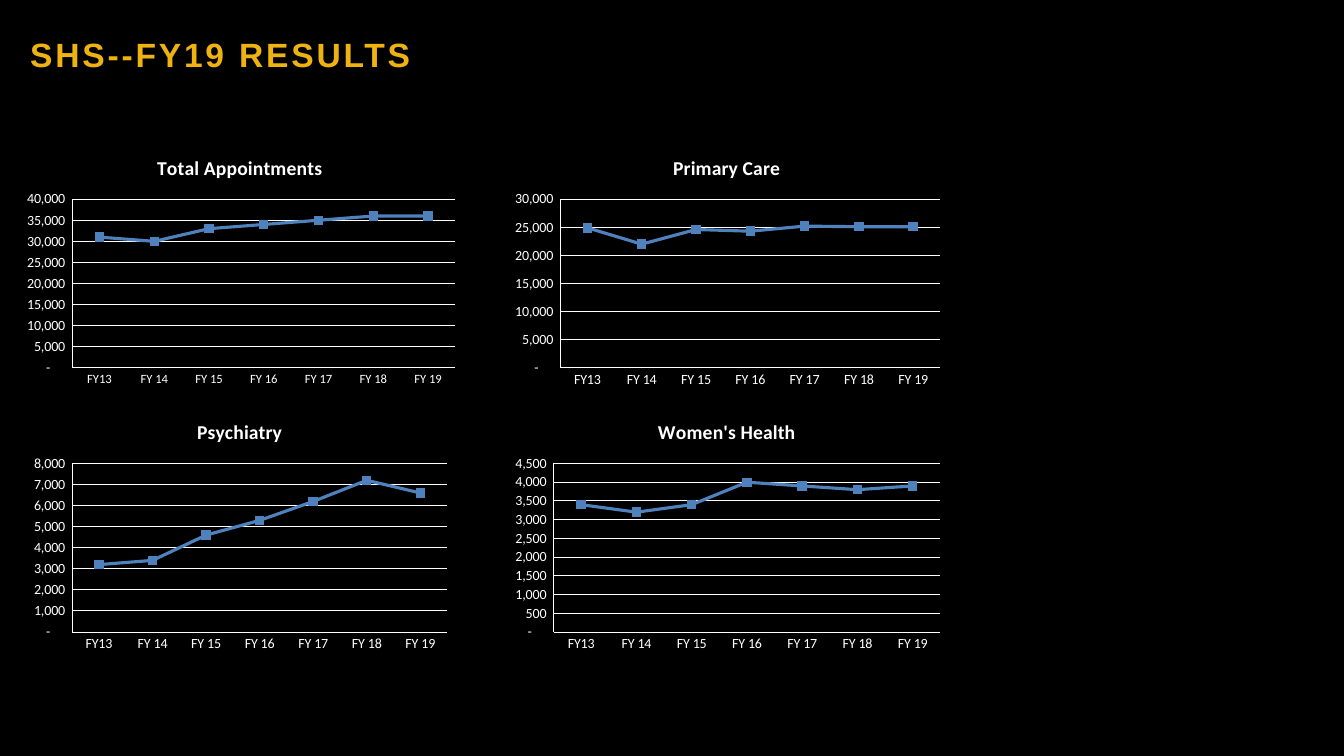
from lxml.etree import SubElement
from pptx import Presentation
from pptx.chart.data import CategoryChartData
from pptx.dml.color import RGBColor
from pptx.enum.chart import XL_CHART_TYPE, XL_MARKER_STYLE, XL_TICK_MARK
from pptx.enum.shapes import MSO_SHAPE
from pptx.enum.text import MSO_ANCHOR, PP_ALIGN
from pptx.oxml.ns import qn
from pptx.util import Cm, Pt

BLACK, WHITE, GOLD, BLUE = "000000", "FFFFFF", "EEB211", "4F81BD"
COUNT_FORMAT = '_(* #,##0_);_(* \\(#,##0\\);_(* "-"??_);_('
YEARS = ["FY13"] + [f"FY {year}" for year in range(14, 20)]

TOP_ROW, BOTTOM_ROW = 3.53, 10.19
CHART_HEIGHT = 6.35
PLOT_TOP, PLOT_HEIGHT = 1.49, 4.25
PLOT_RIGHT_MARGIN = 0.23

# title, left, top, width, plot left, axis maximum, axis step, year size, visits
TRENDS = [
    ("Psychiatry", 0.58, BOTTOM_ROW, 10.92, 1.82, 8000, 1000, 10,
     [3200, 3400, 4600, 5300, 6200, 7200, 6600]),
    ("Women's Health", 12.7, BOTTOM_ROW, 11.23, 13.95, 4500, 500, 10,
     [3400, 3200, 3400, 4000, 3900, 3800, 3900]),
    ("Primary Care", 12.7, TOP_ROW, 11.23, 14.12, 30000, 5000, 10,
     [24900, 22000, 24600, 24300, 25200, 25100, 25100]),
    ("Total Appointments", 0.38, TOP_ROW, 11.33, 1.82, 40000, 5000, 9,
     [31000, 30000, 33000, 34000, 35000, 36000, 36000]),
]


def color(hex_string):
    return RGBColor.from_string(hex_string)


def draw_line(line, hex_string, points):
    line.color.rgb = color(hex_string)
    line.width = Pt(points)


def place_plot(chart, x, y, w, h):
    """Fix the inner plot area, given as fractions of the chart."""
    plot_area = chart.element.find(".//" + qn("c:plotArea"))
    for automatic in plot_area.findall(qn("c:layout")):
        plot_area.remove(automatic)
    layout = SubElement(plot_area, qn("c:layout"))
    plot_area.insert(0, layout)
    manual = SubElement(layout, qn("c:manualLayout"))
    settings = {"layoutTarget": "inner", "xMode": "edge", "yMode": "edge",
                "x": x, "y": y, "w": w, "h": h}
    for tag, value in settings.items():
        SubElement(manual, qn(f"c:{tag}")).set("val", str(value))


class ResultsSlide:
    heading_font = "Arial"
    chart_font = "Calibri"

    def __init__(self, presentation):
        self.slide = presentation.slides.add_slide(presentation.slide_layouts[6])
        background = self.slide.background.fill
        background.solid()
        background.fore_color.rgb = color(BLACK)

    def style(self, font, name, size, hex_string, bold=False):
        font.name = name
        font.size = Pt(size)
        font.color.rgb = color(hex_string)
        font.bold = bold

    def heading(self, text):
        banner = self.slide.shapes.add_shape(
            MSO_SHAPE.RECTANGLE, 0, 0, Cm(23.93), Cm(2.74))
        banner.shadow.inherit = False
        banner.fill.solid()
        banner.fill.fore_color.rgb = color(BLACK)
        banner.line.fill.background()
        frame = banner.text_frame
        frame.word_wrap = True
        frame.vertical_anchor = MSO_ANCHOR.MIDDLE
        frame.margin_left = Cm(0.76)
        paragraph = frame.paragraphs[0]
        paragraph.alignment = PP_ALIGN.LEFT
        run = paragraph.add_run()
        run.text = text
        self.style(run.font, self.heading_font, 24, GOLD, bold=True)
        run.font.element.set("spc", "200") if hasattr(run.font, "element") \
            else run._r.get_or_add_rPr().set("spc", "200")

    def trend(self, title, left, top, width, plot_left, maximum, step,
              year_size, visits):
        data = CategoryChartData()
        data.categories = YEARS
        data.add_series("Series 1", visits)
        chart = self.slide.shapes.add_chart(
            XL_CHART_TYPE.LINE_MARKERS, Cm(left), Cm(top), Cm(width),
            Cm(CHART_HEIGHT), data).chart
        self.style(chart.font, self.chart_font, 10, WHITE)
        chart.has_legend = False
        chart.has_title = True
        run = chart.chart_title.text_frame.paragraphs[0].add_run()
        run.text = title
        self.style(run.font, self.chart_font, 14, WHITE, bold=True)

        years, counts = chart.category_axis, chart.value_axis
        for axis, size in ((years, year_size), (counts, 10)):
            axis.major_tick_mark = axis.minor_tick_mark = XL_TICK_MARK.NONE
            draw_line(axis.format.line, WHITE, 0.75)
            self.style(axis.tick_labels.font, self.chart_font, size, WHITE)
        counts.minimum_scale, counts.maximum_scale = 0, maximum
        counts.major_unit = step
        counts.has_major_gridlines = True
        draw_line(counts.major_gridlines.format.line, WHITE, 0.75)
        counts.tick_labels.number_format = COUNT_FORMAT
        counts.tick_labels.number_format_is_linked = False

        plot = chart.plots[0]
        plot.vary_by_categories = False
        series = plot.series[0]
        series.smooth = False
        draw_line(series.format.line, BLUE, 2.25)
        series.marker.style = XL_MARKER_STYLE.SQUARE
        series.marker.size = 6
        series.marker.format.fill.solid()
        series.marker.format.fill.fore_color.rgb = color(BLUE)
        draw_line(series.marker.format.line, BLUE, 0.75)

        plot_width = left + width - PLOT_RIGHT_MARGIN - plot_left
        place_plot(chart, (plot_left - left) / width, PLOT_TOP / CHART_HEIGHT,
                   plot_width / width, PLOT_HEIGHT / CHART_HEIGHT)


def main():
    presentation = Presentation()
    presentation.slide_width, presentation.slide_height = Cm(33.87), Cm(19.05)
    results = ResultsSlide(presentation)
    results.heading("SHS--FY19 RESULTS")
    for trend in TRENDS:
        results.trend(*trend)
    presentation.save("out.pptx")


if __name__ == "__main__":
    main()
